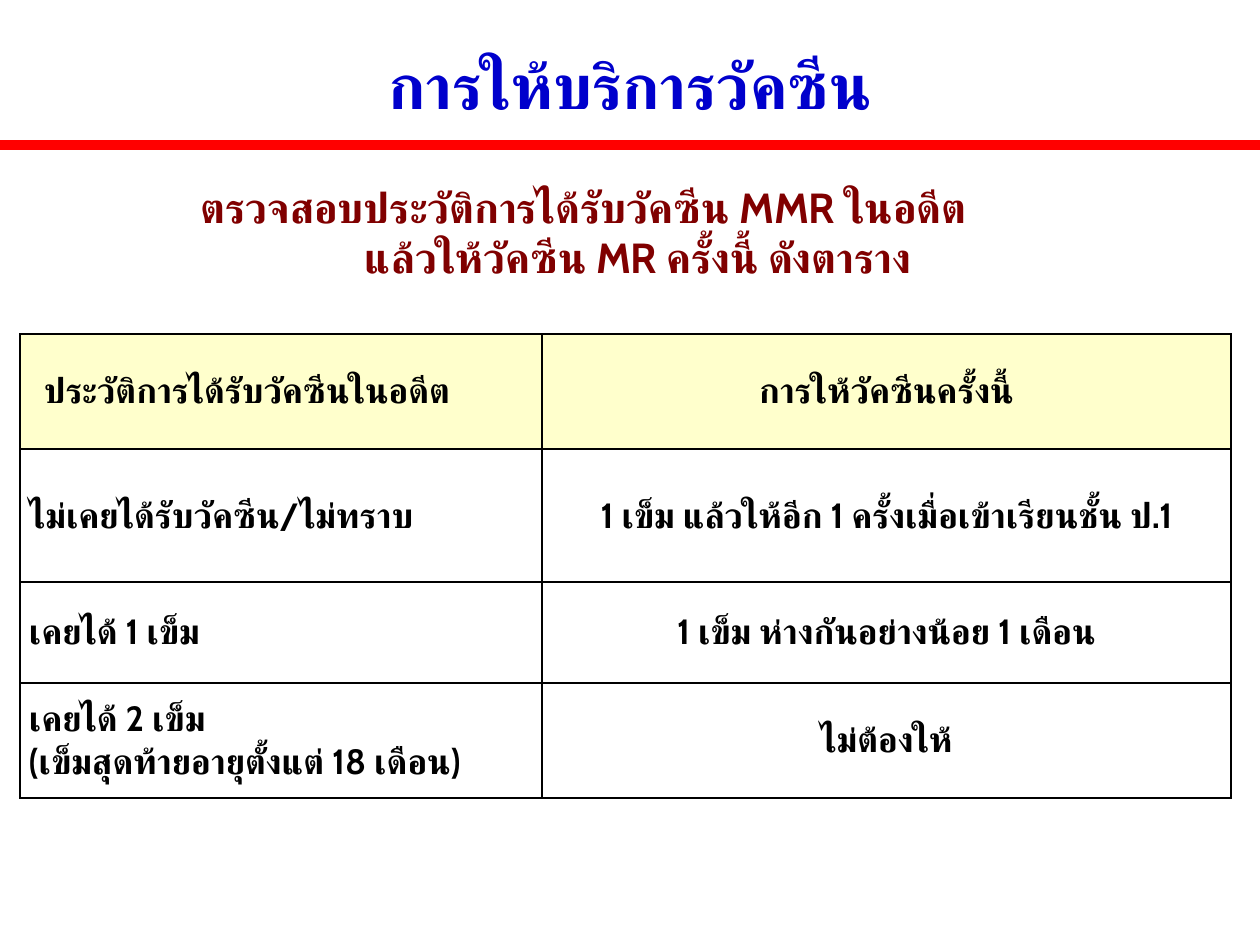
import lxml.etree
import pptx
import pptx.dml.color
import pptx.enum.shapes
import pptx.enum.text
import pptx.oxml.ns
import pptx.util

EMU_PER_PX = 914400 / 126
FONT = "Cabin"
COLORS = {
    "title": "0000CC",
    "rule": "FF0000",
    "subtitle": "800000",
    "header": "FFFFCC",
    "ink": "000000",
}
ALIGN = pptx.enum.text.PP_ALIGN
ANCHOR = pptx.enum.text.MSO_ANCHOR
qn = pptx.oxml.ns.qn

COLUMN_WIDTHS = [522, 689]
ROW_HEIGHTS = [115, 133, 101, 115]
ROWS = [
    ("ประวัติการได้รับวัคซีนในอดีต", "การให้วัคซีนครั้งนี้"),
    ("ไม่เคยได้รับวัคซีน/ไม่ทราบ", "1 เข็ม แล้วให้อีก 1 ครั้งเมื่อเข้าเรียนชั้น ป.1"),
    ("เคยได้ 1 เข็ม", "1 เข็ม ห่างกันอย่างน้อย 1 เดือน"),
    ("เคยได้ 2 เข็ม\v(เข็มสุดท้ายอายุตั้งแต่ 18 เดือน)", "ไม่ต้องให้"),
]


def px(length):
    return pptx.util.Emu(round(length * EMU_PER_PX))


def rgb(name):
    return pptx.dml.color.RGBColor.from_string(COLORS[name])


def write(paragraph, text, size, color, alignment):
    """Fill a paragraph with bold text, using one font for Latin and Thai."""
    paragraph.text = text
    paragraph.alignment = alignment
    font = paragraph.font
    font.name = FONT
    font.size = pptx.util.Pt(size)
    font.bold = True
    font.color.rgb = rgb(color)
    properties = paragraph._p.pPr.find(qn("a:defRPr"))
    lxml.etree.SubElement(properties, qn("a:cs"), typeface=FONT)


def add_text(slide, box, lines, size, color, anchor):
    """Add a text box; lines holds (text, alignment) pairs."""
    frame = slide.shapes.add_textbox(*map(px, box)).text_frame
    frame.word_wrap = True
    frame.vertical_anchor = anchor
    for index, (text, alignment) in enumerate(lines):
        paragraph = frame.add_paragraph() if index else frame.paragraphs[0]
        write(paragraph, text, size, color, alignment)


def add_rule(slide, y, width):
    rule = slide.shapes.add_connector(
        pptx.enum.shapes.MSO_CONNECTOR.STRAIGHT, 0, px(y), px(width), px(y))
    rule.line.color.rgb = rgb("rule")
    rule.line.width = pptx.util.Pt(6)
    lxml.etree.SubElement(rule._element.spPr, qn("a:effectLst"))


def set_borders(cell):
    properties = cell._tc.get_or_add_tcPr()
    for index, side in enumerate(("lnL", "lnR", "lnT", "lnB")):
        border = lxml.etree.Element(qn(f"a:{side}"), w=str(pptx.util.Pt(1)))
        fill = lxml.etree.SubElement(border, qn("a:solidFill"))
        lxml.etree.SubElement(fill, qn("a:srgbClr"), val=COLORS["ink"])
        properties.insert(index, border)


def fill_cell(cell, text, is_header, alignment):
    cell.vertical_anchor = ANCHOR.MIDDLE
    cell.margin_left = cell.margin_right = px(9)
    cell.margin_top = cell.margin_bottom = 0
    paragraph = cell.text_frame.paragraphs[0]
    write(paragraph, text, 20, "ink", alignment)
    paragraph.space_before = paragraph.space_after = pptx.util.Pt(12 if is_header else 6)
    if is_header:
        cell.fill.solid()
        cell.fill.fore_color.rgb = rgb("header")
    else:
        cell.fill.background()
    set_borders(cell)


def add_vaccine_table(slide, left, top):
    table = slide.shapes.add_table(
        len(ROWS), len(COLUMN_WIDTHS), px(left), px(top),
        px(sum(COLUMN_WIDTHS)), px(sum(ROW_HEIGHTS))).table
    table.first_row = table.horz_banding = False
    for column, width in zip(table.columns, COLUMN_WIDTHS):
        column.width = px(width)
    for row_index, (row, height) in enumerate(zip(table.rows, ROW_HEIGHTS)):
        row.height = px(height)
        is_header = row_index == 0
        for column_index, text in enumerate(ROWS[row_index]):
            centred = is_header or column_index == 1
            fill_cell(row.cells[column_index], text, is_header,
                      ALIGN.CENTER if centred else ALIGN.LEFT)
    # The first heading sits left of the middle of its column.
    table.cell(0, 0).margin_right = px(77)


def main():
    presentation = pptx.Presentation()
    presentation.slide_width, presentation.slide_height = px(1260), px(945)
    slide = presentation.slides.add_slide(presentation.slide_layouts[6])
    add_text(slide, (63, 5, 1134, 158), [("การให้บริการวัคซีน", ALIGN.CENTER)],
             36, "title", ANCHOR.MIDDLE)
    add_rule(slide, 145, 1260)
    add_vaccine_table(slide, 20, 334)
    subtitle = [
        ("ตรวจสอบประวัติการได้รับวัคซีน MMR ในอดีต", ALIGN.LEFT),
        ("แล้วให้วัคซีน MR ครั้งนี้ ดังตาราง", ALIGN.CENTER),
    ]
    add_text(slide, (188, 175, 900, 115), subtitle, 24, "subtitle", ANCHOR.TOP)
    presentation.save("out.pptx")


if __name__ == "__main__":
    main()
